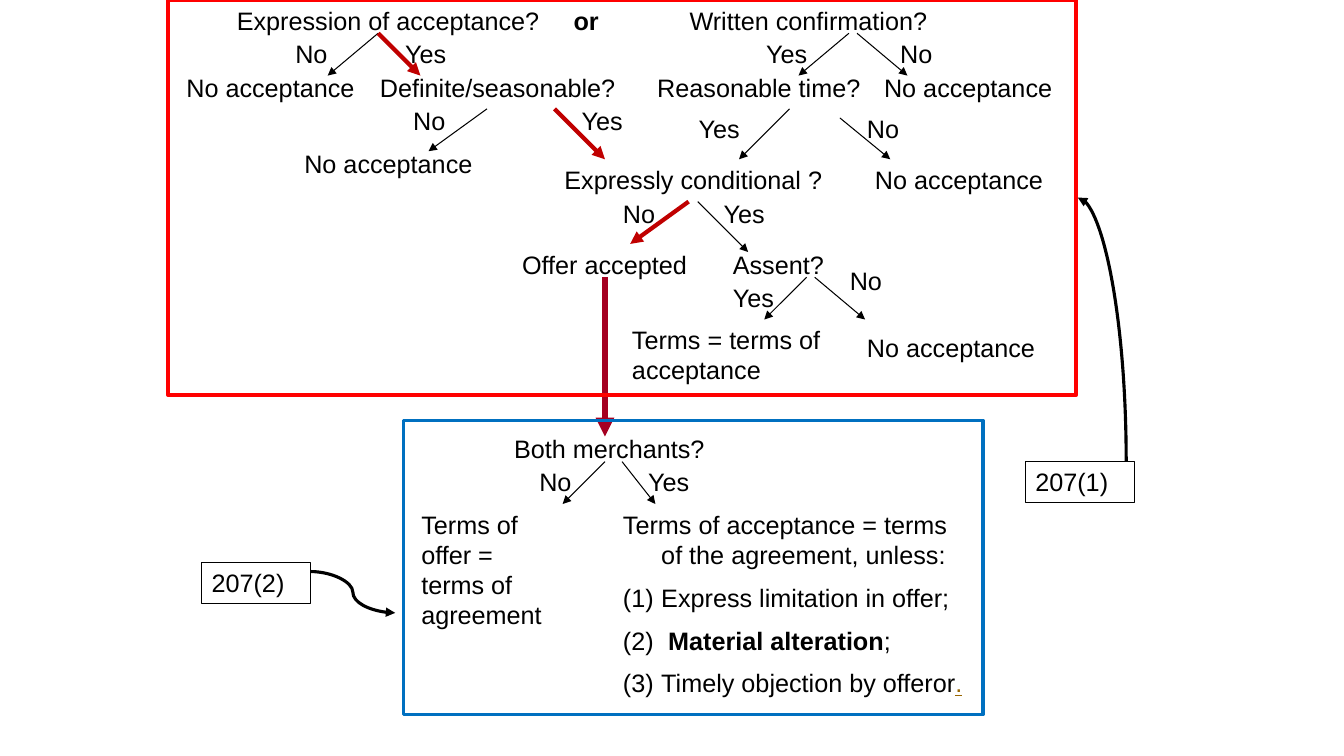
from lxml.etree import SubElement
from pptx import Presentation
from pptx.dml.color import RGBColor
from pptx.enum.shapes import MSO_CONNECTOR, MSO_SHAPE
from pptx.enum.text import MSO_ANCHOR, MSO_AUTO_SIZE, PP_ALIGN
from pptx.oxml.ns import qn
from pptx.util import Inches, Pt

COLORS = {
    "black": "000000",
    "path": "C00000",
    "trunk": "A50021",
    "first_section": "FF0000",
    "second_section": "0070C0",
    "period": "996600",
}
LINE_HEIGHT = 0.4


def color(name):
    return RGBColor.from_string(COLORS[name])


def add_run(paragraph, text, bold=False, underline=False, tint="black"):
    run = paragraph.add_run()
    run.text = text
    run.font.name = "Arial"
    run.font.size = Pt(18)
    run.font.bold = bold
    run.font.underline = underline
    run.font.color.rgb = color(tint)


class FlowSlide:
    """Holds the slide and draws the parts of the decision chart."""

    def __init__(self, presentation):
        self.slide = presentation.slides.add_slide(presentation.slide_layouts[6])

    def prepare(self, frame, wrap=True):
        frame.word_wrap = wrap
        frame.auto_size = MSO_AUTO_SIZE.SHAPE_TO_FIT_TEXT
        frame.vertical_anchor = MSO_ANCHOR.TOP
        frame.paragraphs[0].alignment = PP_ALIGN.LEFT
        return frame

    def text(self, left, top, width, text="", height=LINE_HEIGHT, wrap=True):
        box = self.slide.shapes.add_textbox(
            Inches(left), Inches(top), Inches(width), Inches(height))
        frame = self.prepare(box.text_frame, wrap)
        if text:
            add_run(frame.paragraphs[0], text)
        return frame

    def tabbed_line(self, left, top, width, parts, stops):
        paragraph = self.text(left, top, width).paragraphs[0]
        tabs = SubElement(paragraph._p.get_or_add_pPr(), qn("a:tabLst"))
        for stop in stops:
            SubElement(tabs, qn("a:tab"), pos=str(Inches(stop)), algn="l")
        for index, (text, bold) in enumerate(parts):
            add_run(paragraph, "\t" + text if index else text, bold=bold)

    def numbered_list(self, left, top, width, height, heading, items):
        frame = self.text(left, top, width, height=height)
        for index, runs in enumerate([heading] + items):
            paragraph = frame.add_paragraph() if index else frame.paragraphs[0]
            properties = paragraph._p.get_or_add_pPr()
            properties.set("marL", str(Inches(0.38)))
            properties.set("indent", str(-Inches(0.38)))
            if index:
                paragraph.space_before = Pt(9)
                SubElement(properties, qn("a:buFont"), typeface="Arial")
                SubElement(properties, qn("a:buAutoNum"), type="arabicParenBoth")
            for text, style in runs:
                add_run(paragraph, text, **style)

    def box(self, left, top, width, height, tint, weight, text=""):
        shape = self.slide.shapes.add_shape(
            MSO_SHAPE.RECTANGLE, Inches(left), Inches(top), Inches(width), Inches(height))
        shape.shadow.inherit = False
        shape.fill.background()
        shape.line.color.rgb = color(tint)
        shape.line.width = Pt(weight)
        if text:
            add_run(self.prepare(shape.text_frame).paragraphs[0], text)

    def arrow(self, start, end, tint="black", weight=0.75, kind=MSO_CONNECTOR.STRAIGHT):
        connector = self.slide.shapes.add_connector(
            kind, *[Inches(value) for value in (*start, *end)])
        connector.line.color.rgb = color(tint)
        connector.line.width = Pt(weight)
        SubElement(connector.line._get_or_add_ln(), qn("a:tailEnd"), type="triangle")
        properties = connector._element.spPr
        SubElement(properties, qn("a:effectLst"))
        return properties

    def quarter_curve(self, start, end):
        # Lay the curve out flat, then turn it a quarter so it leaves upwards
        center_x, center_y = (start[0] + end[0]) / 2, (start[1] + end[1]) / 2
        half_width, half_height = (start[1] - end[1]) / 2, (start[0] - end[0]) / 2
        properties = self.arrow(
            (center_x + half_width, center_y - half_height),
            (center_x - half_width, center_y + half_height),
            weight=2.25, kind=MSO_CONNECTOR.CURVE)
        properties.find(qn("a:xfrm")).set("rot", "5400000")
        properties.find(qn("a:prstGeom")).set("prst", "curvedConnector2")


BRANCHES = [
    ((3.75, 0.33), (3.25, 0.75)), ((8.5, 0.33), (9, 0.75)),
    ((8.42, 0.33), (7.92, 0.75)), ((4.83, 1.08), (4.25, 1.5)),
    ((7.83, 1.08), (7.33, 1.58)), ((8.33, 1.17), (8.83, 1.58)),
    ((6.92, 2), (7.42, 2.5)), ((8.08, 2.75), (8.58, 3.17)),
    ((8, 2.75), (7.58, 3.17)), ((6, 4.58), (5.58, 5)),
    ((6.17, 4.58), (6.5, 5)),
]
CHOSEN_PATH = [
    ((3.75, 0.33), (4.17, 0.75)),
    ((5.5, 1.08), (6, 1.58)),
    ((6.83, 2), (6.25, 2.42)),
]
STEPS = [
    (3.67, 0.67, 2.83, "Definite/seasonable?"),
    (6.42, 0.67, 2.33, "Reasonable time?"),
    (5.5, 1.58, 2.83, "Expressly conditional ?"),
    (5.08, 2.42, 2.17, "Offer accepted"),
    (7.17, 2.42, 1.25, "Assent?"),
    (5, 4.25, 2.17, "Both merchants?"),
]
REJECTIONS = [(1.75, 0.67), (8.67, 0.67), (2.92, 1.42), (8.58, 1.58), (8.5, 3.25)]
YES_LABELS = [(3.92, 0.33), (7.5, 0.33), (5.67, 1), (6.83, 1.08),
              (7.08, 1.92), (7.17, 2.75), (6.33, 4.58)]
NO_LABELS = [(2.83, 0.33), (8.83, 0.33), (4, 1), (8.5, 1.08),
             (6.08, 1.92), (8.33, 2.58), (5.25, 4.58)]


def main():
    presentation = Presentation()
    presentation.slide_width = Inches(13.33)
    presentation.slide_height = Inches(7.5)
    chart = FlowSlide(presentation)

    # Arrows between the steps
    for start, end in BRANCHES:
        chart.arrow(start, end)
    chart.arrow((6, 2.75), (6, 4.33), "trunk", 4.5)

    # Section frames, with their labels and pointers
    chart.box(1.67, 0, 9, 3.92, "first_section", 3)
    chart.box(4, 4.17, 5.75, 2.92, "second_section", 2.25)
    chart.quarter_curve((11.17, 4.58), (10.69, 1.96))
    chart.arrow((3.08, 5.67), (3.92, 6.08), weight=2.25, kind=MSO_CONNECTOR.CURVE)
    chart.box(10.17, 4.58, 1.08, 0.41, "black", 0.75, "207(1)")
    chart.box(2, 5.58, 1.08, 0.41, "black", 0.75, "207(2)")

    # Questions and outcomes
    chart.tabbed_line(2.25, 0, 7.25, [
        ("Expression of acceptance?", False), ("or", True),
        ("Written confirmation?", False)], [3.34, 4.49])
    for left, top, width, text in STEPS:
        chart.text(left, top, width, text)
    for left, top in REJECTIONS:
        chart.text(left, top, 2, "No acceptance")
    chart.text(6.17, 3.17, 2.33, "Terms = terms of acceptance", height=0.7)
    chart.text(4.08, 5, 1.58, "Terms of offer = terms of agreement", height=1.3)
    chart.numbered_list(
        6.08, 5, 3.58, 2.06,
        [("Terms of acceptance = terms of the agreement, unless:", {})],
        [[("Express limitation in offer;", {})],
         [(" ", {}), ("Material alteration", {"bold": True}), (";", {})],
         [("Timely objection by offeror", {}),
          (".", {"underline": True, "tint": "period"})]])

    # Answers on the branches
    for left, top in YES_LABELS:
        chart.text(left, top, 0.67, "Yes")
    for left, top in NO_LABELS:
        chart.text(left, top, 0.52, "No", wrap=False)

    # Chosen path on top
    for start, end in CHOSEN_PATH:
        chart.arrow(start, end, "path", 3)

    presentation.save("out.pptx")


if __name__ == "__main__":
    main()
